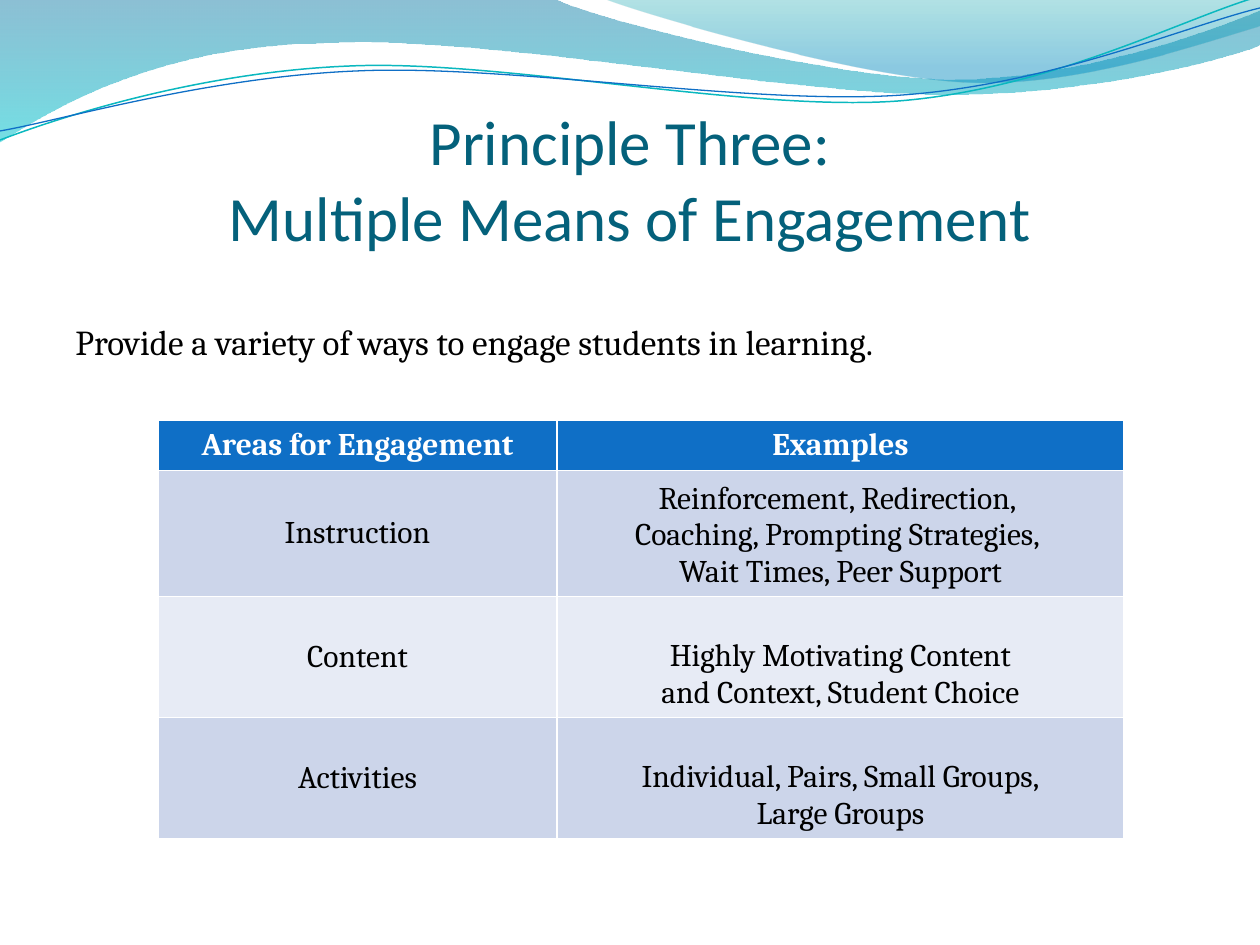
import pptx
import pptx.util
import pptx.dml.color
import pptx.enum.text
import pptx.oxml.ns
import lxml.etree

PX = 914400 / 126
ANCHOR = pptx.enum.text.MSO_ANCHOR
ALIGN = pptx.enum.text.PP_ALIGN
qn = pptx.oxml.ns.qn

COLORS = {
    "title": "04617B", "text": "000000", "white": "FFFFFF",
    "header": "0F6FC6", "band": "CCD5EA", "light": "E7EBF5",
    "deep": "0074A1", "aqua": "00C6CF", "teal": "00A1A9",
    "blue": "008BBF", "teal line": "0AB8BF", "blue line": "0F6FC6",
}
TITLE = "Principle Three:\vMultiple Means of Engagement"
INTRO = "Provide a variety of ways to engage students in learning."
HEADER = ["Areas for Engagement", "Examples"]
AREAS = [
    ("Instruction", "Reinforcement, Redirection, \nCoaching, Prompting Strategies, \nWait Times, Peer Support"),
    ("Content", "Highly Motivating Content\nand Context, Student Choice"),
    ("Activities", "Individual, Pairs, Small Groups,\nLarge Groups"),
]
COLUMNS = [399, 567]
HEADER_HEIGHT, ROW_HEIGHT = 48, 121

WAVES = [
    ([(0, 0), (554, -1), (600, 21, 837, 79, 955, 79), (1074, 79, 1207, 33, 1260, 11),
      (1261, 45), (1239, 55, 1096, 96, 940, 94), (784, 94, 481, 35, 324, 43),
      (163, 45, 58, 105, -1, 142)],
     [(0, "deep", 45), (1, "aqua", 55)]),
    ([(604, -1), (641, 14, 859, 78, 969, 82), (1079, 87, 1211, 40, 1260, 26), (1260, 0)],
     [(0, "teal", 30), (0.8, "blue", 45)]),
]
RIBBONS = [
    ([(0, 140), (60, 117, 199, 72, 349, 66), (498, 59, 747, 112, 898, 101),
      (1050, 89, 1182, 19, 1257, -3)], "teal line", 0.85),
    ([(0, 131), (59, 121, 207, 77, 357, 71), (508, 64, 752, 106, 903, 95),
      (1053, 84, 1186, 26, 1260, 8)], "blue line", 0.75),
]


def px(n):
    return pptx.util.Emu(round(n * PX))


def rgb(name):
    return pptx.dml.color.RGBColor.from_string(COLORS[name])


def add_outline(s, curve, close):
    ends = [(px(seg[-2]), px(seg[-1])) for seg in curve]
    fb = s.shapes.build_freeform(*ends[0], scale=1.0)
    fb.add_line_segments(ends[1:], close=close)
    sp = fb.convert_to_shape()
    sp.shadow.inherit = False
    lines = list(sp.element.iter(qn("a:lnTo")))
    for line, seg in zip(lines, curve[1:]):
        if len(seg) == 2:
            continue
        bezier = lxml.etree.Element(qn("a:cubicBezTo"))
        for x, y in zip(seg[::2], seg[1::2]):
            lxml.etree.SubElement(bezier, qn("a:pt"),
                                  x=str(px(x) - sp.left), y=str(px(y) - sp.top))
        line.getparent().replace(line, bezier)
    return sp


def add_wave(s, curve, stops):
    sp = add_outline(s, curve, True)
    sp.line.fill.background()
    sp.fill.gradient()
    sp.fill.gradient_angle = 270
    for stop, (position, color, opacity) in zip(sp.fill.gradient_stops, stops):
        stop.position = position
        stop.color.rgb = rgb(color)
    for clr, (position, color, opacity) in zip(sp.element.spPr.iter(qn("a:srgbClr")), stops):
        lxml.etree.SubElement(clr, qn("a:alpha"), val=str(opacity * 1000))


def add_ribbon(s, curve, color, width):
    sp = add_outline(s, curve, False)
    sp.fill.background()
    sp.line.color.rgb = rgb(color)
    sp.line.width = pptx.util.Pt(width)


def write(tf, text, color, align, **font):
    tf.text = text
    for p in tf.paragraphs:
        p.alignment = align
        for r in p.runs:
            r.font.color.rgb = rgb(color)
            for key, value in font.items():
                setattr(r.font, key, value)


def add_text(s, box, text, color, align, frame, **font):
    tf = s.shapes.add_textbox(*map(px, box)).text_frame
    tf.word_wrap = True
    for key, value in frame.items():
        setattr(tf, key, value)
    write(tf, text, color, align, **font)


def add_areas_table(s):
    rows = [HEADER, *AREAS]
    heights = [HEADER_HEIGHT] + [ROW_HEIGHT] * len(AREAS)
    table = s.shapes.add_table(len(rows), len(COLUMNS), px(158), px(420),
                               px(sum(COLUMNS)), px(sum(heights))).table
    for col, width in zip(table.columns, COLUMNS):
        col.width = px(width)
    for i, (values, height) in enumerate(zip(rows, heights)):
        table.rows[i].height = px(height)
        head = i == 0
        fill = "header" if head else "band" if i % 2 else "light"
        for j, text in enumerate(values):
            cell = table.cell(i, j)
            cell.fill.solid()
            cell.fill.fore_color.rgb = rgb(fill)
            cell.vertical_anchor = ANCHOR.BOTTOM if j and not head else ANCHOR.MIDDLE
            write(cell.text_frame, text, "white" if head else "text", ALIGN.CENTER,
                  name="Cambria", size=pptx.util.Pt(18), bold=head)


def main():
    prs = pptx.Presentation()
    prs.slide_width, prs.slide_height = px(1260), px(945)
    s = prs.slides.add_slide(prs.slide_layouts[6])
    for wave in WAVES:
        add_wave(s, *wave)
    for ribbon in RIBBONS:
        add_ribbon(s, *ribbon)
    add_text(s, (63, 97, 1134, 157), TITLE, "title", ALIGN.CENTER,
             {"vertical_anchor": ANCHOR.BOTTOM, "margin_left": 0, "margin_right": 0,
              "margin_bottom": 0}, name="Calibri", size=pptx.util.Pt(36))
    add_text(s, (63, 267, 1134, 605), INTRO, "text", ALIGN.LEFT,
             {"margin_top": px(54)}, name="Cambria", size=pptx.util.Pt(20))
    add_areas_table(s)
    prs.save("out.pptx")


if __name__ == "__main__":
    main()
